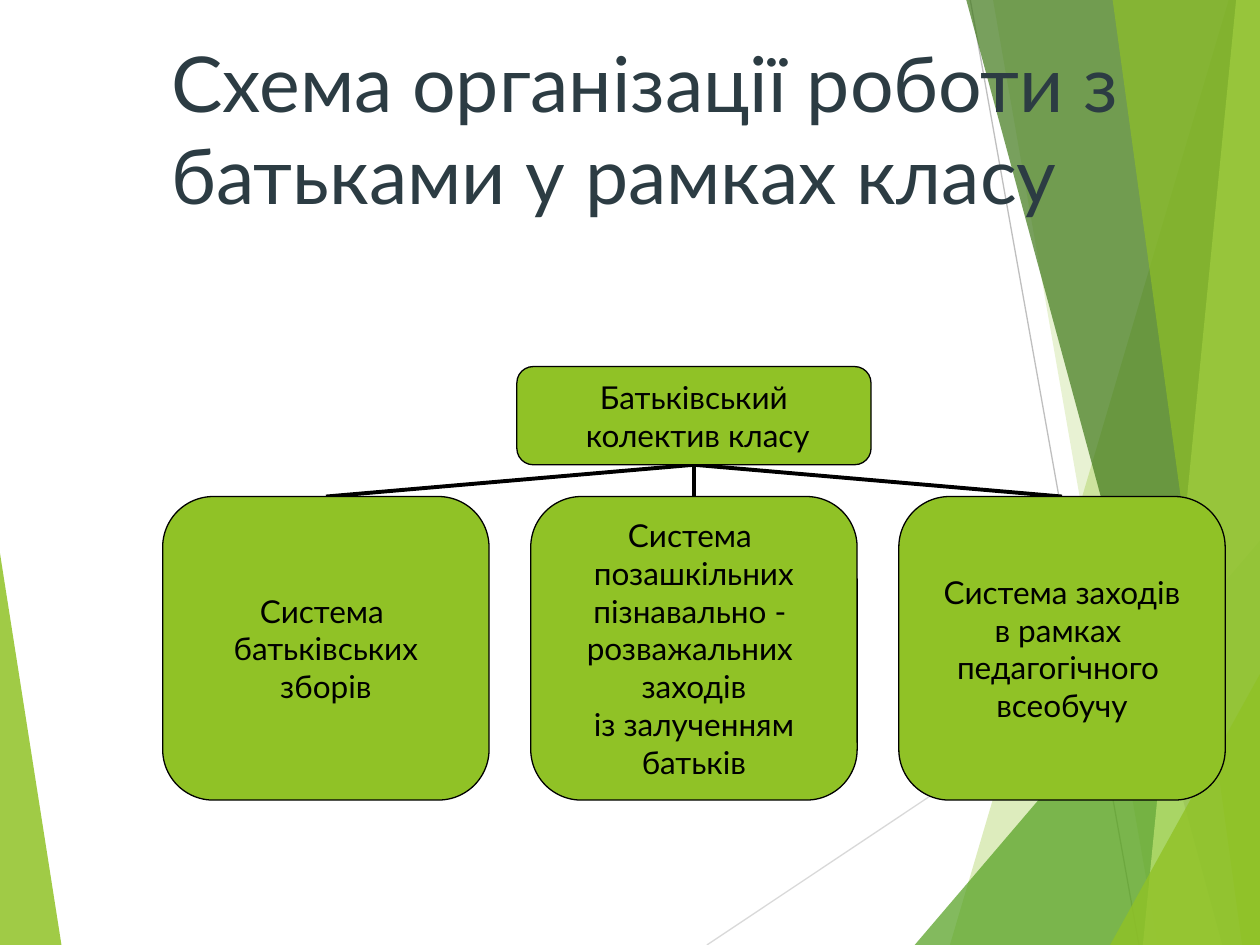
from lxml import etree
from pptx import Presentation
from pptx.dml.color import RGBColor
from pptx.enum import shapes as kinds, text as txt
from pptx.oxml import ns
from pptx.util import Cm, Pt

LIME = RGBColor(0x90, 0xC2, 0x26)
GREEN = RGBColor(0x54, 0xA0, 0x21)
FOREST = RGBColor(0x3F, 0x78, 0x19)
PALE = RGBColor(0xC0, 0xE4, 0x74)
SLATE = RGBColor(0x2C, 0x3C, 0x43)
SILVER = RGBColor(0xD9, 0xD9, 0xD9)
GRAY = RGBColor(0xBF, 0xBF, 0xBF)
BLACK = RGBColor(0, 0, 0)
FONT = "Lato"
WIDE, HIGH = 25.4, 19.05

RAYS = [
    ((0, 11.15), (1.24, HIGH), (0, HIGH), LIME, 85),
    ((24.77, 0), (19.15, HIGH), None, LIME, 30),
    ((20.02, 0), (23.34, HIGH), None, LIME, 20),
    ((WIDE, 10.9), (18.44, HIGH), None, GREEN, 72),
    ((19.48, 0), (24.64, HIGH), None, FOREST, 70),
    ((24.92, 0), (23.04, HIGH), None, PALE, 70),
    ((22.43, 0), (25.04, HIGH), None, LIME, 65),
    ((WIDE, 13.59), (22.38, HIGH), None, LIME, 80),
]
ROOT = ["Батьківський", " колектив класу"]
CARDS = [
    ["Система ", "батьківських", "зборів"],
    ["Система ", "позашкільних", "пізнавально - ", "розважальних ",
     "заходів", "із залученням", "батьків"],
    ["Система заходів", "в рамках ", "педагогічного ", "всеобучу"],
]


def add_ray(slide, top, base, corner, color, alpha):
    if corner:
        points = [top, base, corner]
    else:
        points = [top, base, (WIDE, HIGH), (WIDE, top[1])]
    spots = [(Cm(x), Cm(y)) for x, y in points]
    form = slide.shapes.build_freeform(*spots[0])
    form.add_line_segments(spots[1:], close=True)
    ray = form.convert_to_shape()
    ray.shadow.inherit = False
    ray.line.fill.background()
    ray.fill.solid()
    ray.fill.fore_color.rgb = color
    tint = ray.fill._xPr.find(".//" + ns.qn("a:srgbClr"))
    etree.SubElement(tint, ns.qn("a:alpha"), val=str(alpha * 1000))


def add_line(slide, start, end, color, width):
    ends = [Cm(n) for n in (*start, *end)]
    line = slide.shapes.add_connector(kinds.MSO_CONNECTOR.STRAIGHT, *ends)
    line.line.color.rgb = color
    line.line.width = Pt(width)
    etree.SubElement(line._element.spPr, ns.qn("a:effectLst"))


def set_font(para, size, color):
    para.font.name = FONT
    para.font.size = Pt(size)
    para.font.color.rgb = color


def set_title(slide, words):
    title = slide.shapes.title
    title.left, title.top = Cm(3.2), Cm(0.58)
    title.width, title.height = Cm(21.64), Cm(4.06)
    frame = title.text_frame
    frame.text = words
    frame.auto_size = txt.MSO_AUTO_SIZE.NONE
    frame.vertical_anchor = txt.MSO_ANCHOR.TOP
    para = frame.paragraphs[0]
    para.alignment = txt.PP_ALIGN.LEFT
    set_font(para, 44, SLATE)
    slide.shapes._spTree.append(title._element)


def add_box(slide, left, top, width, height, lines):
    box = slide.shapes.add_shape(
        kinds.MSO_SHAPE.ROUNDED_RECTANGLE,
        Cm(left), Cm(top), Cm(width), Cm(height))
    box.shadow.inherit = False
    box.fill.solid()
    box.fill.fore_color.rgb = LIME
    box.line.color.rgb = BLACK
    box.line.width = Pt(0.75)
    frame = box.text_frame
    frame.text = "\n".join(lines)
    frame.word_wrap = True
    frame.vertical_anchor = txt.MSO_ANCHOR.MIDDLE
    for para in frame.paragraphs:
        para.alignment = txt.PP_ALIGN.CENTER
        set_font(para, 18, BLACK)


def add_tree(slide):
    left, top, width, step = 3.28, 10.01, 6.58, 7.42
    hub = left + step + width / 2
    lefts = [left + step * i for i in range(len(CARDS))]
    for x in lefts:
        add_line(slide, (x + width / 2, top), (hub, 9.37), BLACK, 2.25)
    add_box(slide, hub - 3.57, 7.39, 7.14, 1.98, ROOT)
    for x, lines in zip(lefts, CARDS):
        add_box(slide, x, top, width, 6.12, lines)


def main():
    deck = Presentation()
    deck.slide_width, deck.slide_height = Cm(WIDE), Cm(HIGH)
    slide = deck.slides.add_slide(deck.slide_layouts[5])
    add_ray(slide, *RAYS[0])
    add_line(slide, (14.25, HIGH), (WIDE, 11.61), SILVER, 0.75)
    add_line(slide, (19.56, 0), (22.96, HIGH), GRAY, 0.75)
    for ray in RAYS[1:]:
        add_ray(slide, *ray)
    set_title(slide, "Схема організації роботи з батьками у рамках класу")
    add_tree(slide)
    deck.save("out.pptx")


if __name__ == "__main__":
    main()
